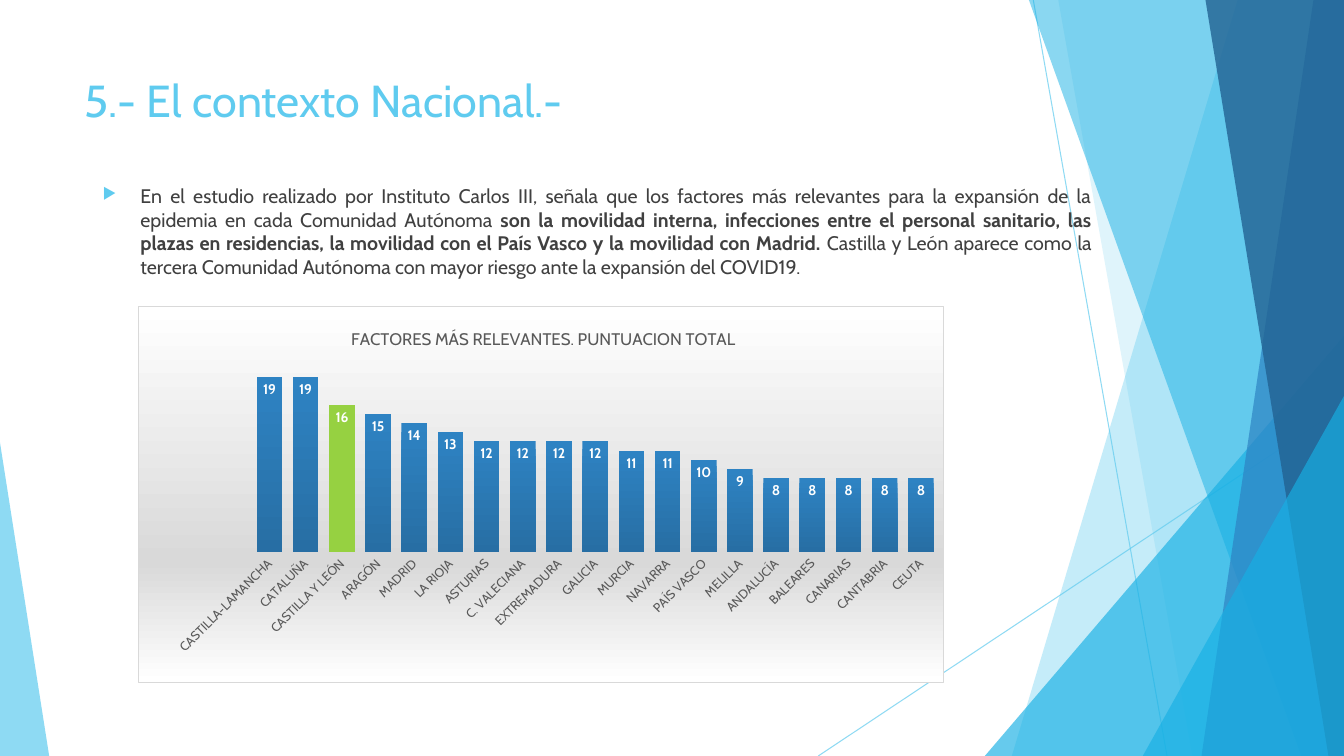
from lxml import etree
from pptx import Presentation
from pptx import util as u
from pptx.chart.data import CategoryChartData
from pptx.dml.color import RGBColor
from pptx.enum import chart as ch, shapes, text
from pptx.oxml import parse_xml
from pptx.oxml.ns import nsdecls, qn

SKY = RGBColor(0x5F, 0xCB, 0xEF)
CYAN = RGBColor(0x17, 0xB0, 0xE4)
BLUE = RGBColor(0x2E, 0x83, 0xC3)
DEEP = RGBColor(0x27, 0x6E, 0xA4)
NAVY = RGBColor(0x22, 0x62, 0x92)
GREEN = RGBColor(0x96, 0xD1, 0x41)
DARK = RGBColor(0x40, 0x40, 0x40)
GRAY = RGBColor(0x59, 0x59, 0x59)
PALE = RGBColor(0xD9, 0xD9, 0xD9)
WHITE = RGBColor(0xFF, 0xFF, 0xFF)
WIDTH, HEIGHT = 33.87, 19.05

SCORES = {
    "CASTILLA-LAMANCHA": 19, "CATALUÑA": 19, "CASTILLA Y LEÓN": 16,
    "ARAGÓN": 15, "MADRID": 14, "LA RIOJA": 13, "ASTURIAS": 12,
    "C. VALECIANA": 12, "EXTREMADURA": 12, "GALICIA": 12, "MURCIA": 11,
    "NAVARRA": 11, "PAÍS VASCO": 10, "MELILLA": 9, "ANDALUCÍA": 8,
    "BALEARES": 8, "CANARIAS": 8, "CANTABRIA": 8, "CEUTA": 8,
}
BODY = [
    ("En el estudio realizado por Instituto Carlos III, señala que los factores "
     "más relevantes para la expansión de la epidemia en cada Comunidad Autónoma ", False),
    ("son la movilidad interna, infecciones entre el personal sanitario, las plazas "
     "en residencias, la movilidad con el País Vasco y la movilidad con Madrid. ", True),
    ("Castilla y León aparece como la tercera Comunidad Autónoma con mayor riesgo "
     "ante la expansión del COVID19.", False),
]


def fade(fill, alpha):
    """Make a solid fill let through all but alpha percent."""
    color = fill._xPr.find(".//" + qn("a:srgbClr"))
    etree.SubElement(color, qn("a:alpha")).set("val", str(alpha * 1000))


def place(parent, index, **parts):
    """Give a chart part a manual layout, as fractions of the chart."""
    for old in parent.findall(qn("c:layout")):
        parent.remove(old)
    inner = '<c:layoutTarget val="inner"/>' if "w" in parts else ""
    modes = "".join(f'<c:{k}Mode val="edge"/>' for k in "xy")
    sizes = "".join(f'<c:{k} val="{v}"/>' for k, v in parts.items())
    parent.insert(index, parse_xml(
        f'<c:layout {nsdecls("c")}><c:manualLayout>{inner}{modes}{sizes}'
        '</c:manualLayout></c:layout>'))


class Deck:
    font = "Cabin"

    def __init__(self):
        self.show = Presentation()
        self.show.slide_width = u.Cm(WIDTH)
        self.show.slide_height = u.Cm(HEIGHT)
        self.slide = self.show.slides.add_slide(self.show.slide_layouts[6])
        self.items = self.slide.shapes

    def style(self, font, size, color, bold=False):
        font.name, font.size, font.bold = self.font, u.Pt(size), bold
        font.color.rgb = color

    def paint(self, shape, color, alpha):
        shape.shadow.inherit = False
        shape.fill.solid()
        shape.fill.fore_color.rgb = color
        fade(shape.fill, alpha)
        shape.line.fill.background()

    def line(self, *ends):
        line = self.items.add_connector(
            shapes.MSO_CONNECTOR.STRAIGHT, *map(u.Cm, ends))
        line.line.width = u.Pt(0.75)
        line.line.color.rgb = SKY
        fade(line.line.fill, 70)
        etree.SubElement(line._element.spPr, qn("a:effectLst"))

    def band(self, top, foot, color, alpha):
        """Fill from a slanted edge to the right side of the slide."""
        pen = self.items.build_freeform(u.Cm(top), 0)
        pen.add_line_segments([(u.Cm(x), u.Cm(y)) for x, y in (
            (WIDTH, 0), (WIDTH, HEIGHT), (foot, HEIGHT))])
        self.paint(pen.convert_to_shape(), color, alpha)

    def wedge(self, left, top, width, peak, color, alpha):
        """Stand a triangle on the bottom edge, its peak at 0 left or 1 right."""
        shape = self.items.add_shape(
            shapes.MSO_SHAPE.ISOSCELES_TRIANGLE,
            *map(u.Cm, (left, top, width, HEIGHT - top)))
        shape.adjustments[0] = peak
        self.paint(shape, color, alpha)

    def text(self, box, runs, size, color):
        frame = self.items.add_textbox(*map(u.Cm, box)).text_frame
        frame.word_wrap = True
        para = frame.paragraphs[0]
        self.style(para.font, size, color)
        for words, bold in runs:
            run = para.add_run()
            run.text = words
            if bold:
                run.font.bold = True
        return para

    def bullet(self, para):
        para.alignment = text.PP_ALIGN.JUSTIFY
        para.space_before = u.Pt(10)
        props = para._p.get_or_add_pPr()
        props.set("marL", str(u.Cm(0.95)))
        props.set("indent", str(u.Cm(-0.95)))
        marks = (f'<a:buClr {nsdecls("a")}><a:srgbClr val="{SKY}"/></a:buClr>',
                 f'<a:buSzPct {nsdecls("a")} val="80000"/>',
                 f'<a:buChar {nsdecls("a")} char="▶"/>')
        spot = props.index(props.find(qn("a:spcBef"))) + 1
        for step, mark in enumerate(marks):
            props.insert(spot + step, parse_xml(mark))

    def chart(self, box, title, scores, accent):
        data = CategoryChartData()
        data.categories = list(scores)
        data.add_series("Puntuación", list(scores.values()))
        chart = self.items.add_chart(
            ch.XL_CHART_TYPE.COLUMN_CLUSTERED, *map(u.Cm, box), data).chart
        chart.has_legend = False
        chart.font.name, chart.font.size = self.font, u.Pt(10)
        chart.has_title = True
        head = chart.chart_title.text_frame
        head.text = title
        self.style(head.paragraphs[0].font, 12, GRAY)
        place(chart.chart_title._element, 1, x=0.26, y=0.05)
        place(chart._chartSpace.chart.plotArea, 0, x=0.14, y=0.164, w=0.854, h=0.49)
        self.axes(chart)
        self.bars(chart.plots[0], accent)
        self.back(chart)

    def axes(self, chart):
        value = chart.value_axis
        value.minimum_scale, value.maximum_scale = 0, 20
        value.has_major_gridlines = value.visible = False
        names = chart.category_axis
        names.major_tick_mark = ch.XL_TICK_MARK.NONE
        names.format.line.fill.background()
        self.style(names.tick_labels.font, 9, GRAY)
        names._element.find(qn("c:txPr")).find(qn("a:bodyPr")).set("rot", "-2700000")

    def bars(self, plot, accent):
        plot.gap_width = 41
        plot.vary_by_categories = False
        series = plot.series[0]
        fill = series.format.fill
        fill.gradient()
        fill.gradient_angle = 270
        for stop, color in zip(fill.gradient_stops, (BLUE, DEEP)):
            stop.color.rgb = color
        point = series.points[accent].format.fill
        point.solid()
        point.fore_color.rgb = GREEN
        labels = series.data_labels
        labels.show_value = True
        labels.position = ch.XL_LABEL_POSITION.INSIDE_END
        self.style(labels.font, 10, WHITE, True)

    def back(self, chart):
        """Shade the chart area from white to grey and back."""
        stops = "".join(
            f'<a:gs pos="{pos}000"><a:srgbClr val="{color}"/></a:gs>'
            for pos, color in ((0, WHITE), (68, PALE), (100, WHITE)))
        chart._chartSpace.chart.addnext(parse_xml(
            f'<c:spPr {nsdecls("c", "a")}><a:gradFill><a:gsLst>{stops}</a:gsLst>'
            '<a:lin ang="5400000" scaled="0"/></a:gradFill>'
            f'<a:ln w="{u.Pt(0.75)}"><a:solidFill><a:srgbClr val="{PALE}"/>'
            '</a:solidFill></a:ln></c:spPr>'))


def main():
    deck = Deck()
    deck.line(26.04, 0, 29.41, HEIGHT)
    deck.line(WIDTH, 10.24, 20.62, HEIGHT)
    deck.band(31.19, 25.5, SKY, 36)
    deck.band(26.67, 30.05, SKY, 20)
    deck.wedge(24.82, 8.46, 9.05, 1, CYAN, 66)
    deck.band(25.93, 32.79, CYAN, 50)
    deck.band(33.1, 30.28, BLUE, 70)
    deck.band(30.38, 33.48, NAVY, 80)
    deck.wedge(28.8, 9.98, 5.07, 1, CYAN, 66)
    deck.wedge(0, 11.15, 1.24, 0, SKY, 70)
    deck.text((1.88, 1.7, 23.88, 3.66), [("5.- El contexto Nacional.-", False)], 32, SKY)
    deck.bullet(deck.text((2.34, 4.52, 25.43, 4.27), BODY, 14, DARK))
    deck.chart((3.48, 7.7, 20.32, 9.5),
               "FACTORES MÁS RELEVANTES. PUNTUACION TOTAL", SCORES, 2)
    deck.show.save("out.pptx")


if __name__ == "__main__":
    main()
